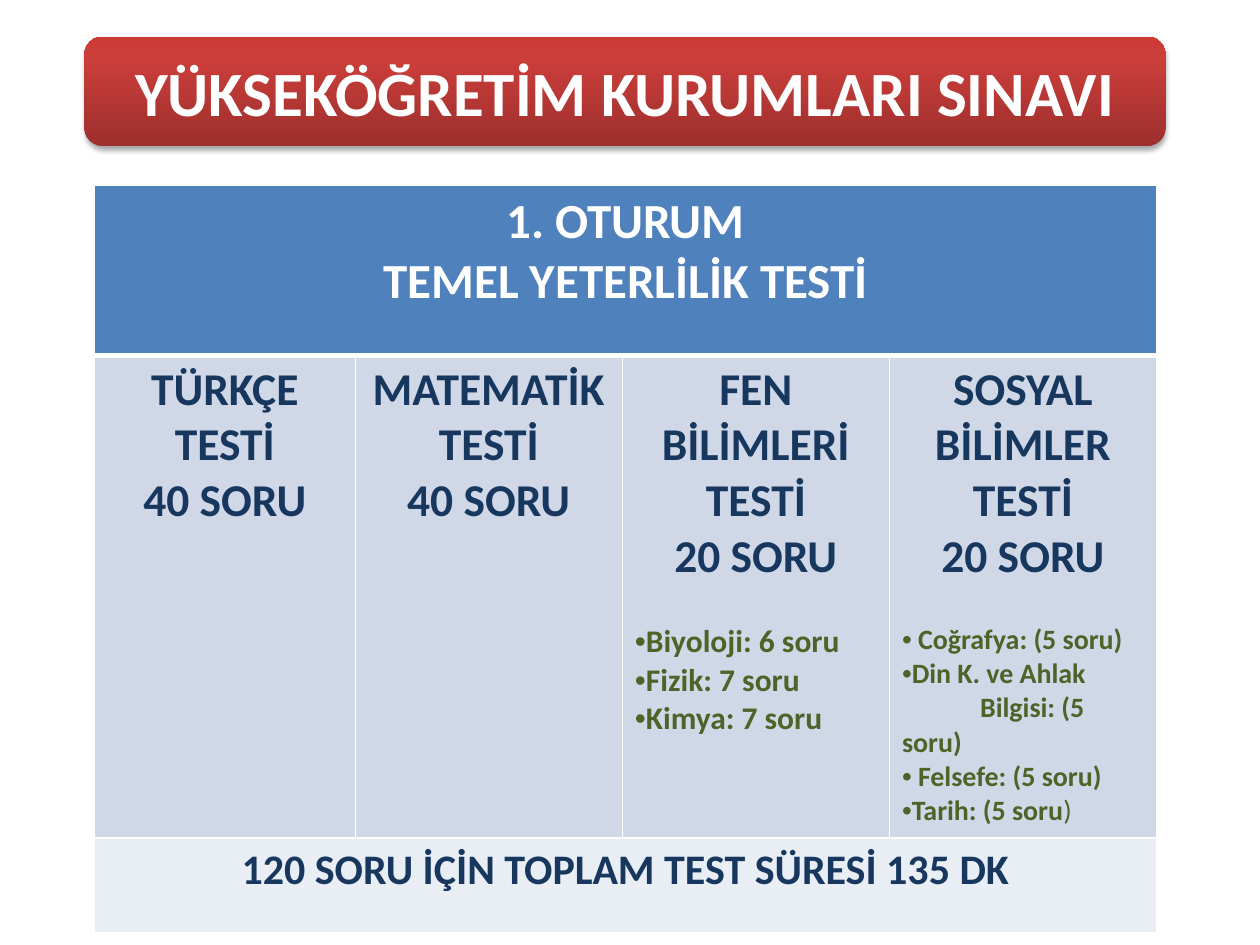
from dataclasses import dataclass
from lxml.etree import SubElement
from pptx import Presentation
from pptx.dml.color import RGBColor
from pptx.enum.shapes import MSO_SHAPE
from pptx.enum.text import MSO_ANCHOR, PP_ALIGN
from pptx.oxml.ns import qn
from pptx.util import Inches, Pt


@dataclass(frozen=True)
class Theme:
    font: str = "Calibri"
    white: str = "FFFFFF"
    navy: str = "17375E"
    olive: str = "4F6228"
    head: str = "4F81BD"
    body: str = "D0D8E8"
    foot: str = "E9EDF4"
    reds: tuple = ((0, "9C2F2D"), (80, "CB3E3A"), (100, "CE3B37"))
    title: int = 36
    banner: int = 28
    test: int = 26
    total: int = 24
    large: int = 18
    small: int = 16


class Deck:
    def __init__(self, theme):
        self.theme = theme
        self.show = Presentation()
        self.show.slide_width = Inches(10)
        self.show.slide_height = Inches(7.5)
        self.slide = self.show.slides.add_slide(self.show.slide_layouts[6])

    def style(self, para, size, color, align=PP_ALIGN.CENTER):
        para.alignment = align
        for run in para.runs:
            font = run.font
            font.name, font.size, font.bold = self.theme.font, Pt(size), True
            font.color.rgb = RGBColor.from_string(color)

    def label(self, frame, text, size, color):
        frame.text = text
        for para in frame.paragraphs:
            self.style(para, size, color)

    def title(self, text, box):
        shape = self.slide.shapes.add_shape(MSO_SHAPE.ROUNDED_RECTANGLE, *map(Inches, box))
        shape.line.fill.background()
        shape.shadow.inherit = False
        shape.fill.gradient()
        shape.fill.gradient_angle = 90
        props = shape._element.spPr
        stops = props.find(".//" + qn("a:gsLst"))
        for stop in list(stops):
            stops.remove(stop)
        for place, color in self.theme.reds:
            stop = SubElement(stops, qn("a:gs"), pos=str(place * 1000))
            SubElement(stop, qn("a:srgbClr"), val=color)
        cast = SubElement(props.find(qn("a:effectLst")), qn("a:outerShdw"),
                          blurRad=str(Pt(3.1)), dist=str(Pt(1.8)), dir="5400000", rotWithShape="0")
        black = SubElement(cast, qn("a:srgbClr"), val="000000")
        SubElement(black, qn("a:alpha"), val="35000")
        shape.text_frame.vertical_anchor = MSO_ANCHOR.MIDDLE
        shape.text_frame.word_wrap = True
        self.label(shape.text_frame, text, self.theme.title, self.theme.white)

    def table(self, left, top, cols, rows):
        frame = self.slide.shapes.add_table(len(rows), len(cols), Inches(left), Inches(top),
                                            Inches(sum(cols)), Inches(sum(rows)))
        table = frame.table
        for col, width in zip(table.columns, cols):
            col.width = Inches(width)
        for row, height in zip(table.rows, rows):
            row.height = Inches(height)
        return table

    def paint(self, cell, color, top=1, bottom=1):
        props = cell._tc.get_or_add_tcPr()
        for side, width in (("L", 1), ("R", 1), ("T", top), ("B", bottom)):
            line = SubElement(props, qn("a:ln" + side), w=str(Pt(width)))
            fill = SubElement(line, qn("a:solidFill"))
            SubElement(fill, qn("a:srgbClr"), val=self.theme.white)
        cell.fill.solid()
        cell.fill.fore_color.rgb = RGBColor.from_string(color)

    def topics(self, frame, items, size):
        for rank, (text, mark) in enumerate(items):
            para = frame.add_paragraph()
            para.text = text
            if rank == 0:
                para.space_before = Pt(22)
            props = para._p.get_or_add_pPr()
            if mark:
                SubElement(props, qn("a:buFont"), typeface="Arial")
                SubElement(props, qn("a:buChar"), char="•")
            else:
                props.set("indent", str(Inches(0.62)))
            self.style(para, size, self.theme.olive, PP_ALIGN.LEFT)
        return para


def main():
    theme = Theme()
    deck = Deck(theme)
    table = deck.table(0.75, 1.47, (2.07, 2.12, 2.12, 2.12), (1.35, 3.83, 0.75))
    for row, color, top, bottom in ((0, theme.head, 1, 3), (1, theme.body, 3, 1),
                                    (2, theme.foot, 1, 1)):
        for cell in table.rows[row].cells:
            deck.paint(cell, color, top, bottom)

    for row, text, size, color in (
        (0, "1. OTURUM\nTEMEL YETERLİLİK TESTİ", theme.banner, theme.white),
        (2, "120 SORU İÇİN TOPLAM TEST SÜRESİ 135 DK", theme.total, theme.navy),
    ):
        table.cell(row, 0).merge(table.cell(row, 3))
        deck.label(table.cell(row, 0).text_frame, text, size, color)

    tests = (("TÜRKÇE", 40), ("MATEMATİK", 40), ("FEN BİLİMLERİ", 20), ("SOSYAL BİLİMLER", 20))
    for col, (name, count) in enumerate(tests):
        deck.label(table.cell(1, col).text_frame, f"{name} TESTİ\n{count} SORU",
                   theme.test, theme.navy)

    deck.topics(table.cell(1, 2).text_frame, (
        ("Biyoloji: 6 soru", True),
        ("Fizik: 7 soru", True),
        ("Kimya: 7 soru", True),
    ), theme.large)
    last = deck.topics(table.cell(1, 3).text_frame, (
        (" Coğrafya: (5 soru)", True),
        ("Din K. ve Ahlak", True),
        ("Bilgisi: (5 soru)", False),
        (" Felsefe: (5 soru)", True),
        ("Tarih: (5 soru", True),
    ), theme.small)
    last.add_run().text = ")"
    deck.style(last, theme.small, theme.olive, PP_ALIGN.LEFT)
    last.runs[-1].font.bold = False

    deck.title("YÜKSEKÖĞRETİM KURUMLARI SINAVI", (0.67, 0.29, 8.58, 0.87))
    deck.show.save("out.pptx")


if __name__ == "__main__":
    main()
